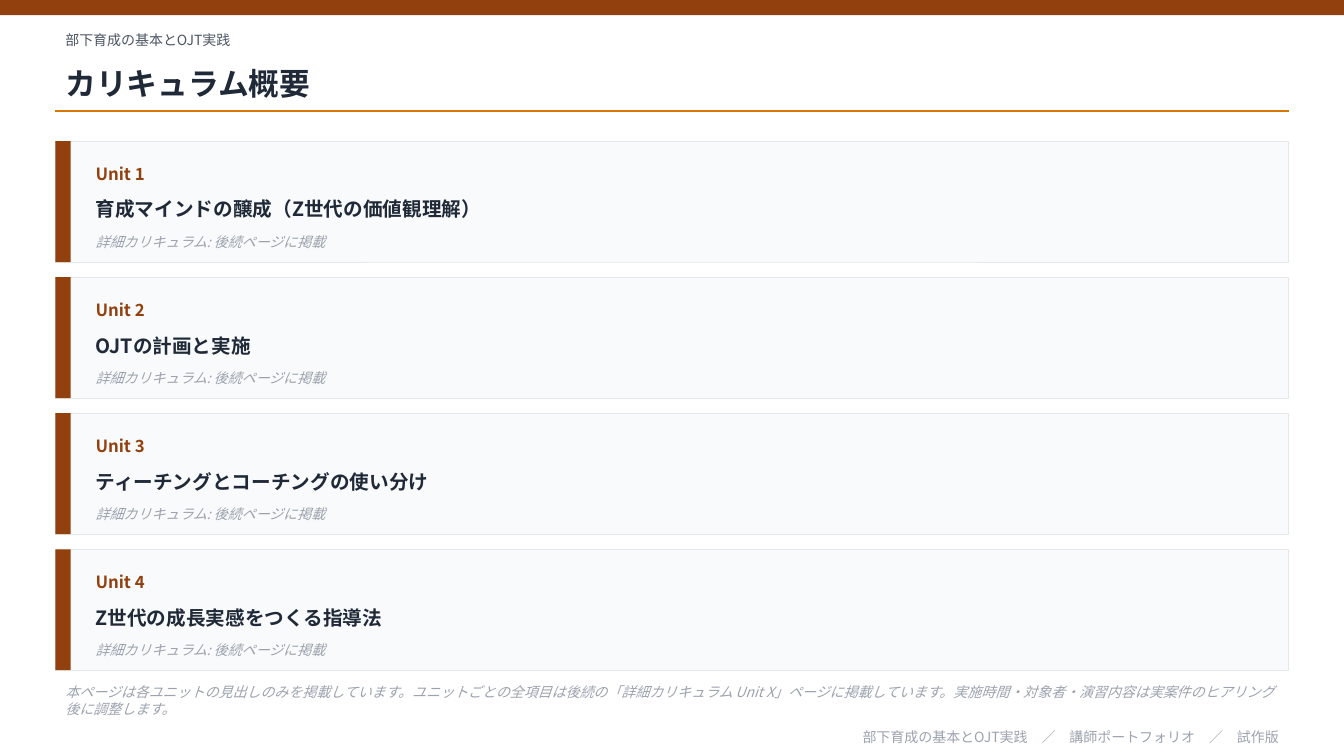
from dataclasses import dataclass

from lxml import etree
from pptx import Presentation
from pptx import util as u
from pptx.dml.color import RGBColor
from pptx.enum import shapes, text
from pptx.oxml import ns
from pptx.slide import Slide

FONT = "Noto Sans CJK JP"
COLORS = {
    "brand": "92400E",
    "accent": "D97706",
    "ink": "1F2937",
    "subtle": "4B5563",
    "muted": "9CA3AF",
    "card": "F9FAFB",
    "border": "E5E7EB",
}
PAGE_WIDTH, PAGE_HEIGHT = 13.33, 7.5
MARGIN = 0.55
CONTENT_WIDTH = PAGE_WIDTH - 2 * MARGIN
RULE_TOP = 1.1
CARD_TOP, CARD_HEIGHT, CARD_GAP = 1.4, 1.2, 0.15
BAR_WIDTH = 0.15
CARD_TEXT_LEFT = MARGIN + 0.3
CARD_TEXT_WIDTH = CONTENT_WIDTH - 0.5

COURSE = "部下育成の基本とOJT実践"
UNIT_TITLES = [
    "育成マインドの醸成（Z世代の価値観理解）",
    "OJTの計画と実施",
    "ティーチングとコーチングの使い分け",
    "Z世代の成長実感をつくる指導法",
]
DETAIL = "詳細カリキュラム: 後続ページに掲載"
NOTE = (
    "本ページは各ユニットの見出しのみを掲載しています。"
    "ユニットごとの全項目は後続の「詳細カリキュラム Unit X」ページに掲載しています。"
    "実施時間・対象者・演習内容は実案件のヒアリング後に調整します。"
)
FOOTER = f"{COURSE}　／　講師ポートフォリオ　／　試作版"


@dataclass(frozen=True)
class Area:
    left: float
    top: float
    width: float
    height: float

    def lengths(self) -> list[u.Length]:
        return [u.Inches(v) for v in (self.left, self.top, self.width, self.height)]


@dataclass(frozen=True)
class Style:
    size: float
    color: str
    bold: bool = False
    italic: bool = False


LABEL = Style(10, "subtle")
HEADING = Style(22, "ink", bold=True)
UNIT_NUMBER = Style(12, "brand", bold=True)
UNIT_TITLE = Style(14, "ink", bold=True)
REMARK = Style(10, "muted", italic=True)
FOOT = Style(10, "muted")


def rgb(name: str) -> RGBColor:
    return RGBColor.from_string(COLORS[name])


def add_block(page: Slide, area: Area, fill: str, border: str | None = None) -> None:
    block = page.shapes.add_shape(shapes.MSO_SHAPE.RECTANGLE, *area.lengths())
    block.shadow.inherit = False
    block.fill.solid()
    block.fill.fore_color.rgb = rgb(fill)
    if border:
        block.line.color.rgb = rgb(border)
        block.line.width = u.Pt(0.5)
    else:
        block.line.fill.background()


def add_text(page: Slide, area: Area, words: str, style: Style,
             align: text.PP_ALIGN = text.PP_ALIGN.LEFT) -> None:
    box = page.shapes.add_textbox(*area.lengths())
    frame = box.text_frame
    frame.word_wrap = True
    frame.vertical_anchor = text.MSO_ANCHOR.MIDDLE
    para = frame.paragraphs[0]
    para.alignment = align
    span = para.add_run()
    span.text = words
    span.font.size = u.Pt(style.size)
    span.font.bold = style.bold
    span.font.italic = style.italic
    span.font.color.rgb = rgb(style.color)
    span.font.name = FONT
    # Japanese glyphs take the East Asian typeface
    east_asian = etree.SubElement(span.font._element, ns.qn("a:ea"))
    east_asian.set("typeface", FONT)


def add_rule(page: Slide) -> None:
    """Draw the line under the heading."""
    rule = page.shapes.add_connector(
        shapes.MSO_CONNECTOR.STRAIGHT,
        u.Inches(MARGIN), u.Inches(RULE_TOP),
        u.Inches(MARGIN + CONTENT_WIDTH), u.Inches(RULE_TOP),
    )
    rule.line.color.rgb = rgb("accent")
    rule.line.width = u.Pt(1)
    etree.SubElement(rule._element.spPr, ns.qn("a:effectLst"))


def add_unit_card(page: Slide, number: int, title: str) -> None:
    top = CARD_TOP + (number - 1) * (CARD_HEIGHT + CARD_GAP)
    add_block(page, Area(MARGIN, top, CONTENT_WIDTH, CARD_HEIGHT), "card", "border")
    add_block(page, Area(MARGIN, top, BAR_WIDTH, CARD_HEIGHT), "brand")
    add_text(page, Area(CARD_TEXT_LEFT, top + 0.12, 1.5, 0.4), f"Unit {number}", UNIT_NUMBER)
    add_text(page, Area(CARD_TEXT_LEFT, top + 0.45, CARD_TEXT_WIDTH, 0.45), title, UNIT_TITLE)
    add_text(page, Area(CARD_TEXT_LEFT, top + 0.85, CARD_TEXT_WIDTH, 0.3), DETAIL, REMARK)


def main() -> None:
    deck = Presentation()
    deck.slide_width = u.Inches(PAGE_WIDTH)
    deck.slide_height = u.Inches(PAGE_HEIGHT)
    page = deck.slides.add_slide(deck.slide_layouts[6])

    add_block(page, Area(0, 0, PAGE_WIDTH, 0.15), "brand")
    add_text(page, Area(MARGIN, 0.25, CONTENT_WIDTH, 0.3), COURSE, LABEL)
    add_text(page, Area(MARGIN, 0.55, CONTENT_WIDTH, 0.55), "カリキュラム概要", HEADING)
    add_rule(page)
    for number, title in enumerate(UNIT_TITLES, start=1):
        add_unit_card(page, number, title)
    add_text(page, Area(MARGIN, 6.75, CONTENT_WIDTH, 0.4), NOTE, REMARK)
    add_text(page, Area(MARGIN, 7.2, CONTENT_WIDTH, 0.22), FOOTER, FOOT, text.PP_ALIGN.RIGHT)

    deck.save("out.pptx")


if __name__ == "__main__":
    main()
